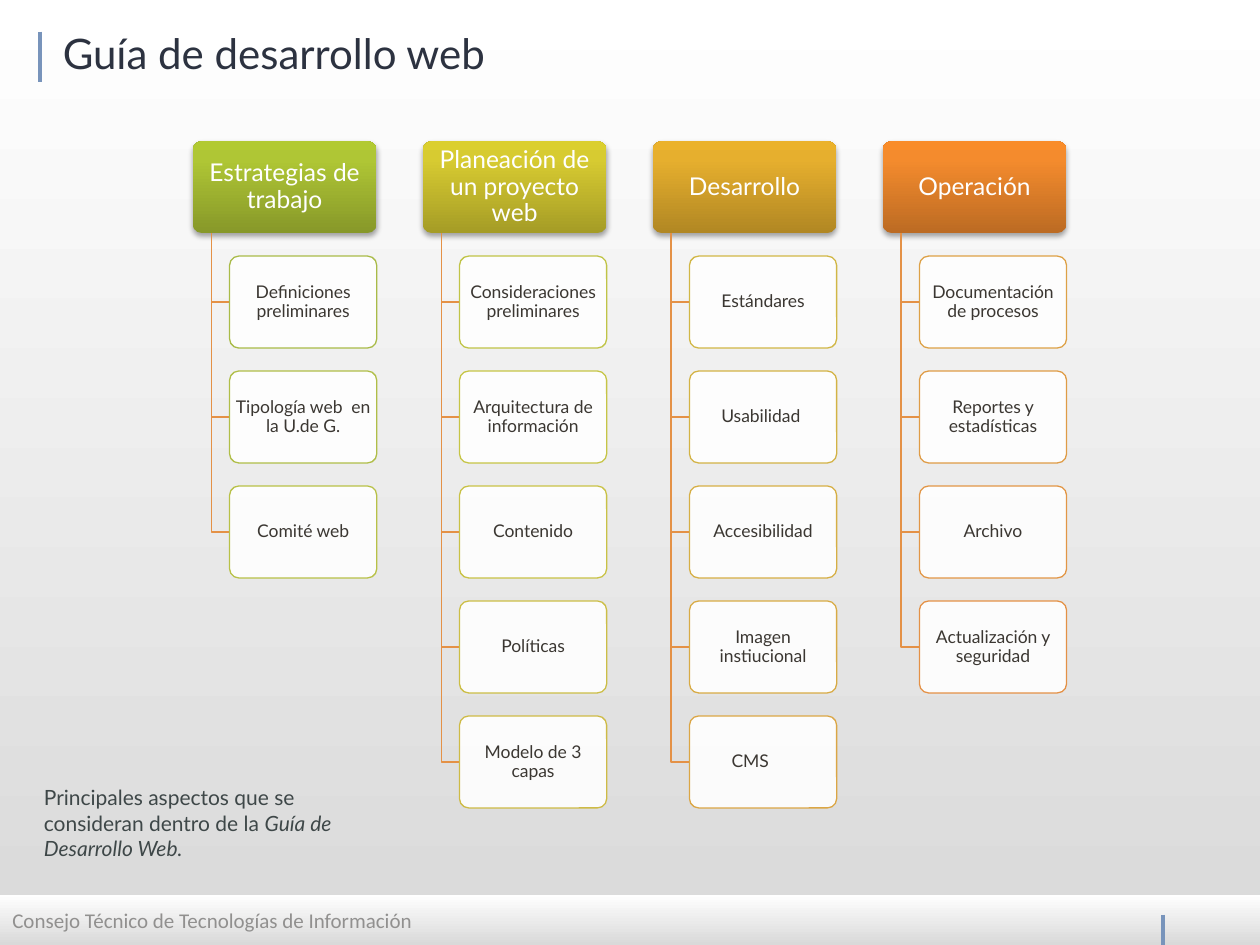
from copy import deepcopy

from lxml import etree
from pptx import Presentation
from pptx import util as u
from pptx.dml.color import RGBColor
from pptx.enum import shapes, text
from pptx.oxml.ns import qn

WHITE = RGBColor(0xFF, 0xFF, 0xFF)
GREY = RGBColor(0xD9, 0xD9, 0xD9)
BLUE = RGBColor(0x78, 0x94, 0xBB)
NAVY = RGBColor(0x2C, 0x32, 0x40)
SLATE = RGBColor(0x3E, 0x47, 0x48)
FOOTER_GREY = RGBColor(0x91, 0x90, 0x8F)
ITEM_TEXT = RGBColor(0x3B, 0x37, 0x32)
ORANGE = RGBColor(0xE4, 0x91, 0x46)

TITLE = "Guía de desarrollo web"
FOOTER = "Consejo Técnico de Tecnologías de Información"
NOTE = [
    ("Principales aspectos que se consideran dentro de la ", False),
    ("Guía de Desarrollo Web.", True),
]
COLUMNS = [
    ("Estrategias de trabajo", ("879829", "AFC635", "B2CA32"), [
        ("Definiciones preliminares", "A9BB48"),
        ("Tipología web  en la U.de G.", "B0BE48"),
        ("Comité web", "B8C147"),
    ]),
    ("Planeación de un proyecto web", ("A59C26", "D7CB31", "DBCF2E"), [
        ("Consideraciones preliminares", "C0C447"),
        ("Arquitectura de información", "C6C546"),
        ("Contenido", "C9C246"),
        ("Políticas", "CCBE46"),
        ("Modelo de 3 capas", "CEBB46"),
    ]),
    ("Desarrollo", ("B18723", "E6AF2E", "EBB22B"), [
        ("Estándares", "D1B746"),
        ("Usabilidad ", "D3B345"),
        ("Accesibilidad", "D6AF45"),
        ("Imagen instiucional", "D8AB45"),
        ("CMS\t", "DBA645"),
    ]),
    ("Operación", ("BC6B23", "F48B2D", "F98C29"), [
        ("Documentación de procesos", "DDA146"),
        ("Reportes y estadísticas", "DF9C46"),
        ("Archivo", "E29646"),
        ("Actualización y seguridad", "E49146"),
    ]),
]

LEFT, TOP = 1.53, 1.12
BOX_H = 0.73
HEAD_W = 2 * BOX_H
COL_PITCH = 1.25 * HEAD_W
ROW_PITCH = 1.25 * BOX_H
TRUNK = 0.1 * HEAD_W
INDENT = 0.2 * HEAD_W


def set_gradient(fill, stops, angle):
    fill.gradient()
    fill.gradient_angle = angle
    first = fill.gradient_stops[0]._gs
    for _ in stops[2:]:
        first.addnext(deepcopy(first))
    for stop, (position, color) in zip(fill.gradient_stops, stops):
        stop.position = position
        stop.color.rgb = color


def add_shadow(shape):
    effects = shape._element.spPr.find(qn("a:effectLst"))
    shadow = etree.SubElement(effects, qn("a:outerShdw"), blurRad=str(u.Pt(3.1)),
                              dist=str(u.Pt(1.8)), dir="5400000", rotWithShape="0")
    color = etree.SubElement(shadow, qn("a:srgbClr"), val="000000")
    etree.SubElement(color, qn("a:alpha"), val="35000")


def add_box(s, x, y, w, label, size, color):
    sp = s.shapes.add_shape(shapes.MSO_SHAPE.ROUNDED_RECTANGLE,
                            u.Inches(x), u.Inches(y), u.Inches(w), u.Inches(BOX_H))
    sp.adjustments[0] = 0.1
    sp.shadow.inherit = False
    tf = sp.text_frame
    tf.word_wrap = True
    tf.vertical_anchor = text.MSO_ANCHOR.MIDDLE
    tf.margin_left = tf.margin_right = tf.margin_top = tf.margin_bottom = 0
    p = tf.paragraphs[0]
    p.text = label
    p.alignment = text.PP_ALIGN.CENTER
    p.line_spacing = 0.9
    p.font.size, p.font.name, p.font.color.rgb = u.Pt(size), "Lato", color
    return sp


def add_header(s, x, label, colors):
    sp = add_box(s, x, TOP, HEAD_W, label, 14, WHITE)
    stops = zip((0, 0.8, 1), map(RGBColor.from_string, colors))
    set_gradient(sp.fill, list(stops), 90)
    sp.line.fill.background()
    add_shadow(sp)


def add_item(s, x, y, label, border):
    sp = add_box(s, x, y, HEAD_W - INDENT, label, 10, ITEM_TEXT)
    sp.fill.solid()
    sp.fill.fore_color.rgb = WHITE
    color = sp._element.spPr.find(qn("a:solidFill"))[0]
    etree.SubElement(color, qn("a:alpha"), val="90000")
    sp.line.color.rgb = RGBColor.from_string(border)
    sp.line.width = u.Pt(0.75)


def add_branch(s, x, y):
    trunk, end = u.Inches(x + TRUNK), u.Inches(x + INDENT)
    middle = u.Inches(y + BOX_H / 2)
    path = s.shapes.build_freeform(trunk, u.Inches(TOP + BOX_H))
    path.add_line_segments([(trunk, middle), (end, middle)], close=False)
    sp = path.convert_to_shape()
    sp.shadow.inherit = False
    sp.fill.background()
    sp.line.color.rgb = ORANGE
    sp.line.width = u.Pt(0.75)


def add_bar(s, x, top, bottom):
    line = s.shapes.add_connector(shapes.MSO_CONNECTOR.STRAIGHT, u.Inches(x),
                                  u.Inches(top), u.Inches(x), u.Inches(bottom))
    line.line.color.rgb = BLUE
    line.line.width = u.Pt(2.25)
    etree.SubElement(line._element.spPr, qn("a:effectLst"))


def add_text(s, x, y, w, h, runs, size, font, color, anchor=text.MSO_ANCHOR.TOP):
    tf = s.shapes.add_textbox(u.Inches(x), u.Inches(y), u.Inches(w), u.Inches(h)).text_frame
    tf.word_wrap = True
    tf.vertical_anchor = anchor
    p = tf.paragraphs[0]
    p.font.size, p.font.name, p.font.color.rgb = u.Pt(size), font, color
    for words, italic in runs:
        r = p.add_run()
        r.text = words
        if italic:
            r.font.italic = True


def main():
    prs = Presentation()
    prs.slide_width, prs.slide_height = u.Inches(10), u.Inches(7.5)
    s = prs.slides.add_slide(prs.slide_layouts[6])
    set_gradient(s.background.fill, [(0, GREY), (1, WHITE)], 90)

    band = s.shapes.add_shape(shapes.MSO_SHAPE.RECTANGLE, 0, u.Inches(7.1),
                              u.Inches(10), u.Inches(0.4))
    band.shadow.inherit = False
    set_gradient(band.fill, [(0, WHITE), (1, GREY)], 270)
    band.line.fill.background()

    add_bar(s, 0.32, 0.25, 0.65)
    add_bar(s, 9.23, 7.26, 7.5)
    add_text(s, 0.4, 0.17, 8.33, 0.75, [(TITLE, False)], 24, "Lato", NAVY)
    add_text(s, 0, 7.1, 5, 0.4, [(FOOTER, False)], 12, "Calibri", FOOTER_GREY,
             text.MSO_ANCHOR.MIDDLE)

    for col, (heading, colors, items) in enumerate(COLUMNS):
        x = LEFT + col * COL_PITCH
        add_header(s, x, heading, colors)
        for row, (label, border) in enumerate(items, 1):
            y = TOP + row * ROW_PITCH
            add_branch(s, x, y)
            add_item(s, x + INDENT, y, label, border)

    add_text(s, 0.25, 6.18, 3, 0.85, NOTE, 12, "Lato", SLATE)
    prs.save("out.pptx")


if __name__ == "__main__":
    main()
